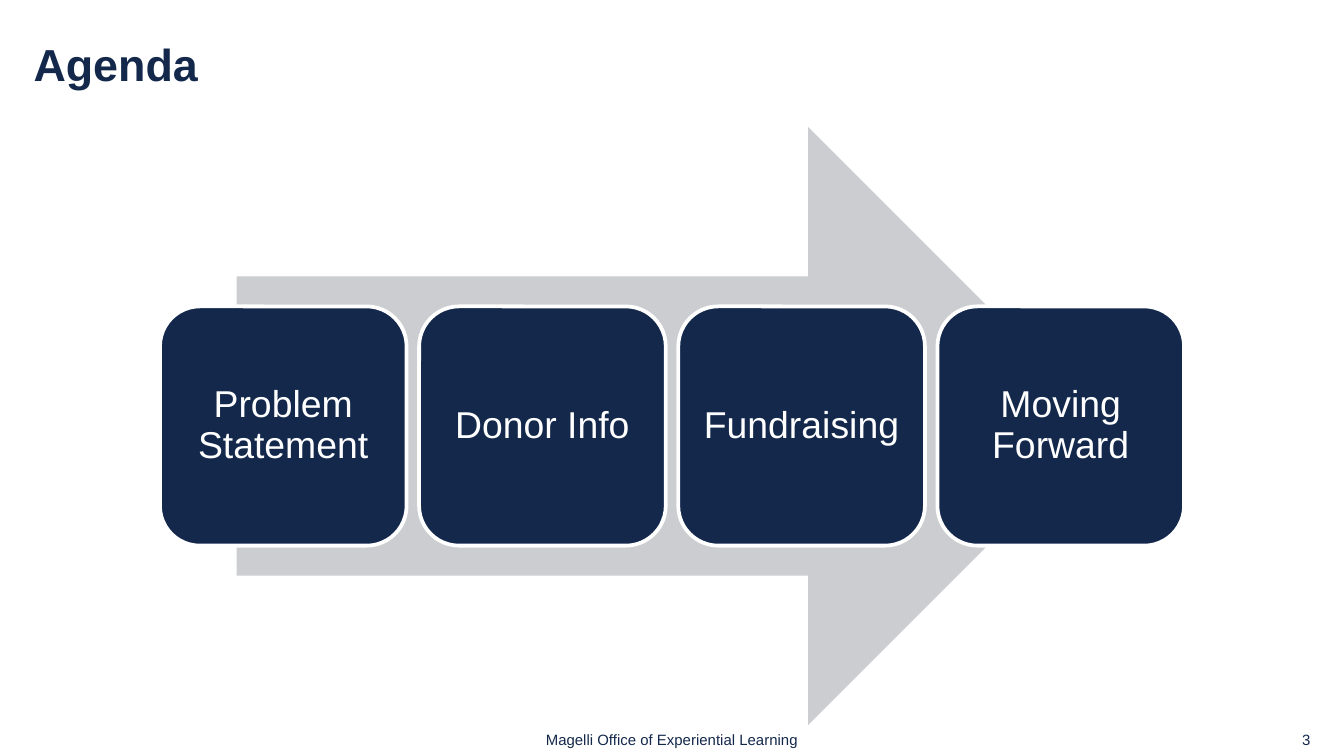
from pptx import Presentation
from pptx.dml.color import RGBColor
from pptx.enum import shapes, text
from pptx import util as u

SCALE = 4572
FONT = "Arial"
COLOURS = {"navy": "13284B", "grey": "CCCDD0", "white": "FFFFFF"}
STEPS = ["Problem Statement", "Donor Info", "Fundraising", "Moving Forward"]


def px(length):
    """Turn px into EMU."""
    return u.Emu(round(length * SCALE))


def colour(name):
    """Look up a named colour."""
    return RGBColor.from_string(COLOURS[name])


def write(shape, words, size, ink, align, margins=(0, 0, 0, 0), bold=False, spacing=1.0):
    """Set and format the single paragraph of a shape."""
    frame = shape.text_frame
    frame.word_wrap = True
    frame.vertical_anchor = text.MSO_ANCHOR.MIDDLE
    frame.margin_left, frame.margin_top, frame.margin_right, frame.margin_bottom = map(px, margins)
    frame.text = words
    para = frame.paragraphs[0]
    para.alignment = align
    para.line_spacing = spacing
    font = para.runs[0].font
    font.name, font.size, font.bold = FONT, u.Pt(size), bold
    font.color.rgb = colour(ink)


def add_label(page, box, words, size, align, **style):
    """Add a navy text box."""
    label = page.shapes.add_textbox(*map(px, box))
    write(label, words, size, "navy", align, **style)


def add_block(page, kind, box, fill):
    """Add a filled preset shape without a line or shadow."""
    block = page.shapes.add_shape(kind, *map(px, box))
    block.shadow.inherit = False
    block.fill.solid()
    block.fill.fore_color.rgb = colour(fill)
    block.line.fill.background()
    return block


def add_title(page, box, words):
    """Add the slide title."""
    add_label(page, box, words, 24, text.PP_ALIGN.LEFT,
              margins=(0, 0, 240, 0), bold=True, spacing=0.9)


def add_process(page, box, steps):
    """Add equally spaced step cards over a wide arrow."""
    left, top, width, height = box
    arrow_width = width * 0.85
    add_block(page, shapes.MSO_SHAPE.RIGHT_ARROW,
              (left + (width - arrow_width) / 2, top, arrow_width, height), "grey")
    card_width, card_height = 367, height * 0.4
    pitch = (width - card_width) / (len(steps) - 1)
    for index, step in enumerate(steps):
        card = add_block(page, shapes.MSO_SHAPE.ROUNDED_RECTANGLE,
                         (left + index * pitch, top + (height - card_height) / 2,
                          card_width, card_height), "navy")
        card.line.color.rgb = colour("white")
        card.line.width = u.Pt(2)
        write(card, step, 20, "white", text.PP_ALIGN.CENTER,
              margins=(16, 16, 16, 16), spacing=0.9)


def add_footer(page, box, owner, number):
    """Add the centred owner and the page number at the right."""
    left, top, width, height = box
    owner_width, number_width = 390, 450
    add_label(page, (left + (width - owner_width) / 2, top, owner_width, height),
              owner, 8, text.PP_ALIGN.CENTER)
    add_label(page, (left + width - number_width, top, number_width, height),
              number, 8, text.PP_ALIGN.RIGHT)


def main():
    """Build and save the agenda slide."""
    deck = Presentation()
    deck.slide_width, deck.slide_height = px(2000), px(1125)
    page = deck.slides.add_slide(deck.slide_layouts[6])
    add_title(page, (50, 40, 1900, 120), "Agenda")
    add_process(page, (238, 189, 1524, 890), STEPS)
    add_footer(page, (50, 1080, 1900, 40), "Magelli Office of Experiential Learning", "3")
    deck.save("out.pptx")


if __name__ == "__main__":
    main()
